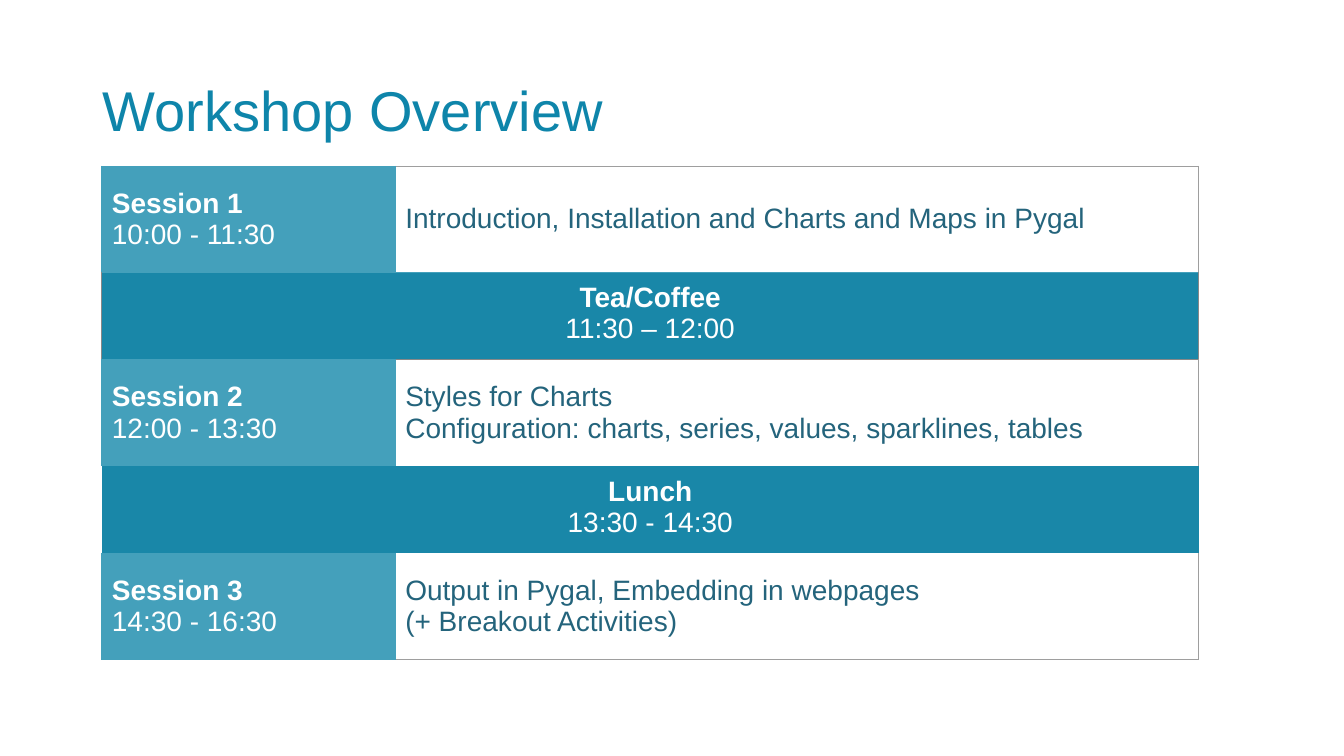
"""Build the workshop overview slide with its timetable of sessions and breaks."""
from dataclasses import dataclass
from typing import Optional

from lxml.etree import SubElement
from pptx import Presentation
from pptx.dml.color import RGBColor
from pptx.enum.text import MSO_ANCHOR, MSO_AUTO_SIZE, PP_ALIGN
from pptx.oxml.ns import qn
from pptx.util import Inches, Pt

TITLE_BLUE = RGBColor(0x0E, 0x85, 0xAA)
SESSION_TEAL = RGBColor(0x44, 0xA0, 0xBB)
BREAK_TEAL = RGBColor(0x19, 0x87, 0xA8)
TOPIC_BLUE = RGBColor(0x24, 0x64, 0x7C)
WHITE = RGBColor(0xFF, 0xFF, 0xFF)
GREY = RGBColor(0x9E, 0x9E, 0x9E)
DARK_GREY = RGBColor(0x88, 0x88, 0x88)

FONT = "Arial"
COLUMN_WIDTHS = (2.91, 7.97)
SESSION_HEIGHT = 1.05
BREAK_HEIGHT = 0.87


@dataclass(frozen=True)
class Borders:
    L: Optional[RGBColor] = None
    R: Optional[RGBColor] = None
    T: Optional[RGBColor] = None
    B: Optional[RGBColor] = None


SESSION_BORDERS = Borders(SESSION_TEAL, SESSION_TEAL, SESSION_TEAL, SESSION_TEAL)
NO_BORDERS = Borders()


@dataclass(frozen=True)
class Slot:
    name: str
    time: str
    borders: Borders
    topics: tuple[str, ...] = ()

    @property
    def height(self) -> float:
        return SESSION_HEIGHT if self.topics else BREAK_HEIGHT


SCHEDULE = (
    Slot("Session 1", "10:00 - 11:30", Borders(SESSION_TEAL, GREY, GREY, DARK_GREY),
         ("Introduction, Installation and Charts and Maps in Pygal",)),
    Slot("Tea/Coffee", "11:30 – 12:00",
         Borders(DARK_GREY, DARK_GREY, SESSION_TEAL, DARK_GREY)),
    Slot("Session 2", "12:00 - 13:30", Borders(SESSION_TEAL, GREY, DARK_GREY),
         ("Styles for Charts",
          "Configuration: charts, series, values, sparklines, tables")),
    Slot("Lunch", "13:30 - 14:30", NO_BORDERS),
    Slot("Session 3", "14:30 - 16:30", Borders(SESSION_TEAL, GREY, None, GREY),
         ("Output in Pygal, Embedding in webpages", "(+ Breakout Activities)")),
)


def draw_borders(cell, borders: Borders) -> None:
    properties = cell._tc.get_or_add_tcPr()
    for side in "LRTB":
        color = getattr(borders, side)
        line = SubElement(properties, qn(f"a:ln{side}"), w=str(Pt(0.75)))
        if color is None:
            SubElement(line, qn("a:noFill"))
        else:
            fill = SubElement(line, qn("a:solidFill"))
            SubElement(fill, qn("a:srgbClr"), val=str(color))


def format_cell(cell, borders: Borders, fill: Optional[RGBColor]) -> None:
    draw_borders(cell, borders)
    if fill is None:
        cell.fill.background()
    else:
        cell.fill.solid()
        cell.fill.fore_color.rgb = fill
    cell.margin_left = cell.margin_right = Inches(0.1)
    cell.margin_top = cell.margin_bottom = Inches(0.1)


def write_lines(cell, lines: tuple[str, ...], color: RGBColor, align: PP_ALIGN,
                anchor: MSO_ANCHOR, bold_first: bool) -> None:
    cell.text = "\n".join(lines)
    cell.vertical_anchor = anchor
    for index, paragraph in enumerate(cell.text_frame.paragraphs):
        paragraph.alignment = align
        paragraph.font.name = FONT
        paragraph.font.size = Pt(20)
        paragraph.font.bold = bold_first and index == 0
        paragraph.font.color.rgb = color


def fill_row(slot_cell, topic_cell, slot: Slot) -> None:
    heading = (slot.name, slot.time)
    if slot.topics:
        format_cell(slot_cell, SESSION_BORDERS, SESSION_TEAL)
        format_cell(topic_cell, slot.borders, None)
        write_lines(slot_cell, heading, WHITE, PP_ALIGN.LEFT, MSO_ANCHOR.MIDDLE, True)
        write_lines(topic_cell, slot.topics, TOPIC_BLUE, PP_ALIGN.LEFT,
                    MSO_ANCHOR.MIDDLE, False)
    else:
        slot_cell.merge(topic_cell)
        for cell in (slot_cell, topic_cell):
            format_cell(cell, slot.borders, BREAK_TEAL)
        write_lines(slot_cell, heading, WHITE, PP_ALIGN.CENTER, MSO_ANCHOR.TOP, True)


def add_title(slide, text: str) -> None:
    title = slide.shapes.title
    title.left, title.top = Inches(0.92), Inches(0.4)
    title.width, title.height = Inches(11.5), Inches(1.45)
    frame = title.text_frame
    frame.text = text
    frame.auto_size = MSO_AUTO_SIZE.NONE
    frame.vertical_anchor = MSO_ANCHOR.MIDDLE
    paragraph = frame.paragraphs[0]
    paragraph.alignment = PP_ALIGN.LEFT
    paragraph.line_spacing = 0.9
    paragraph.font.name = FONT
    paragraph.font.size = Pt(40)
    paragraph.font.color.rgb = TITLE_BLUE


def add_timetable(slide, schedule: tuple[Slot, ...]) -> None:
    timetable = slide.shapes.add_table(
        len(schedule), len(COLUMN_WIDTHS), Inches(1.01), Inches(1.65),
        Inches(sum(COLUMN_WIDTHS)), Inches(sum(slot.height for slot in schedule))).table
    timetable.first_row = timetable.horz_banding = False
    for column, width in zip(timetable.columns, COLUMN_WIDTHS):
        column.width = Inches(width)
    for index, slot in enumerate(schedule):
        timetable.rows[index].height = Inches(slot.height)
        fill_row(timetable.cell(index, 0), timetable.cell(index, 1), slot)


def main() -> None:
    presentation = Presentation()
    presentation.slide_width = Inches(13.33)
    presentation.slide_height = Inches(7.5)
    slide = presentation.slides.add_slide(presentation.slide_layouts[5])
    add_title(slide, "Workshop Overview")
    add_timetable(slide, SCHEDULE)
    presentation.save("out.pptx")


if __name__ == "__main__":
    main()
